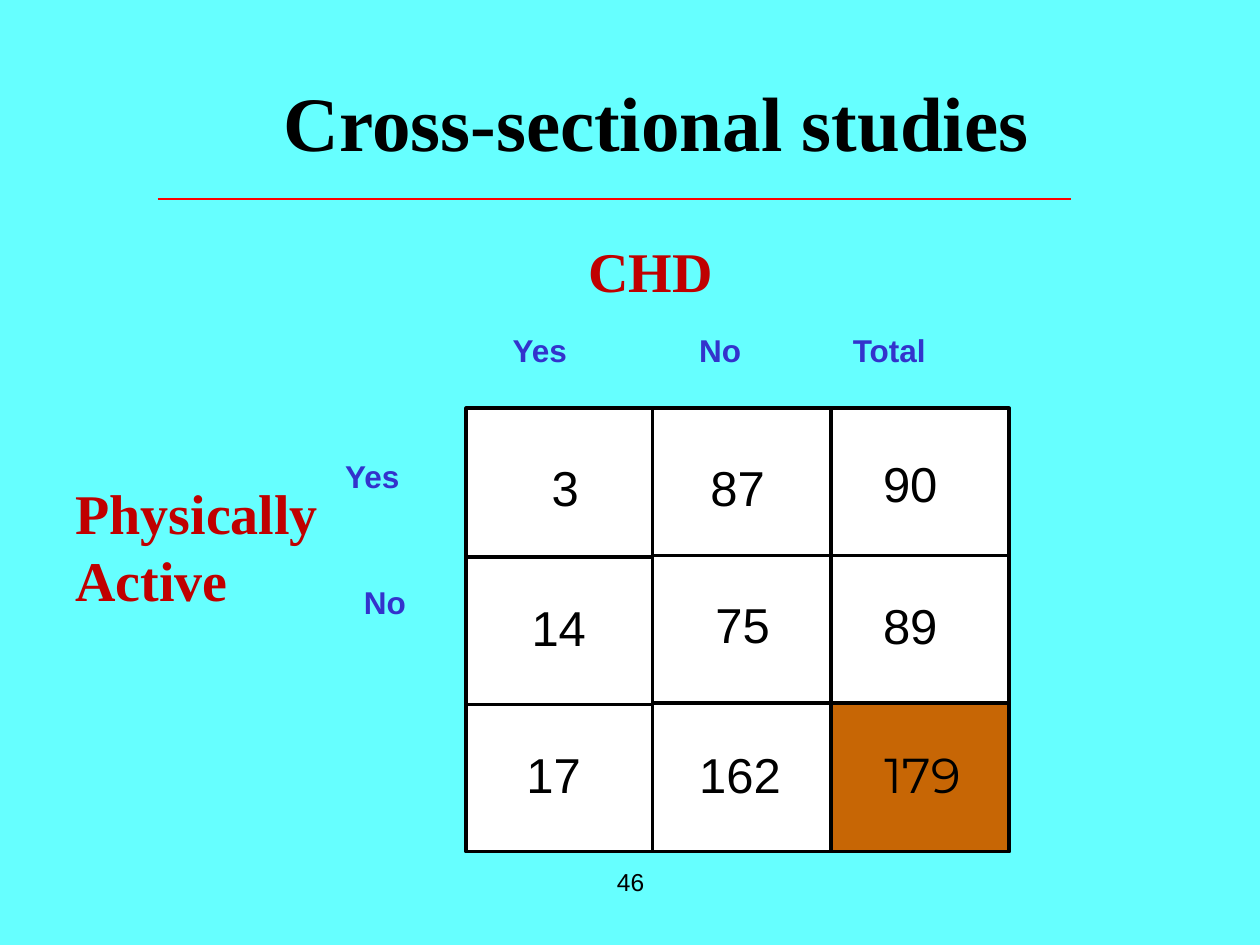
"""Build the cross-sectional studies slide with its two-by-two table and totals."""
from dataclasses import dataclass

from lxml import etree
from pptx import Presentation
from pptx.dml.color import RGBColor
from pptx.enum.shapes import MSO_CONNECTOR, MSO_SHAPE
from pptx.enum.text import MSO_ANCHOR, MSO_AUTO_SIZE, PP_ALIGN
from pptx.oxml.ns import qn
from pptx.util import Inches, Pt

RECT = MSO_SHAPE.RECTANGLE
STRAIGHT = MSO_CONNECTOR.STRAIGHT
MIDDLE, TOP = MSO_ANCHOR.MIDDLE, MSO_ANCHOR.TOP
FIT, NO_FIT = MSO_AUTO_SIZE.SHAPE_TO_FIT_TEXT, MSO_AUTO_SIZE.NONE
LEFT, CENTER = PP_ALIGN.LEFT, PP_ALIGN.CENTER


@dataclass(frozen=True)
class Theme:
    """Colours, fonts and type sizes of the slide."""
    background: str = "66FFFF"
    ink: str = "000000"
    heading: str = "C00000"
    label: str = "3333CC"
    cell: str = "FFFFFF"
    grand_total: str = "C76605"
    rule: str = "FF0000"
    serif: str = "Times New Roman"
    sans: str = "Arial"
    number: str = "Montserrat"
    title_pt: int = 44
    heading_pt: int = 32
    number_pt: int = 28
    label_pt: int = 18
    footer_pt: int = 14


THEME = Theme()
GRID_LEFT, GRID_TOP = 3.7, 3.24
COL_STEP, ROW_STEP = 1.415, 1.17
CELL_W, CELL_H = 1.48, 1.18

COLUMN_LABELS = [("Yes", 3.97, 0.98), ("No", 5.45, 0.83), ("Total", 6.67, 1.18)]
ROW_LABELS = [("Yes", 2.64, 3.58, 0.98), ("No", 2.79, 4.58, 0.83)]
COUNTS = [
    ("3", 4.28, 3.58, 0.67), ("87", 5.54, 3.58, 0.88),
    ("14", 4.12, 4.69, 0.88), ("75", 5.58, 4.67, 0.88), ("89", 6.91, 4.68, 0.88),
    ("17", 4.08, 5.86, 0.88), ("162", 5.45, 5.86, 1.1),
]


def rgb(value):
    """Return a colour from its hex string."""
    return RGBColor.from_string(value)


def add_rect(s, x, y, w, h, fill):
    """Add a filled rectangle without outline."""
    sp = s.shapes.add_shape(RECT, Inches(x), Inches(y), Inches(w), Inches(h))
    sp.shadow.inherit = False
    sp.fill.solid()
    sp.fill.fore_color.rgb = rgb(fill)
    sp.line.fill.background()
    return sp


def add_text(s, text, x, y, w, h, *, font, size, color=THEME.ink, bold=False, fill=None,
             align=LEFT, rtl=True, wrap=False, anchor=TOP, complex_font=None):
    """Add text with one paragraph for each line, on a filled rectangle if asked."""
    if fill:
        sp = add_rect(s, x, y, w, h, fill)
    else:
        sp = s.shapes.add_textbox(Inches(x), Inches(y), Inches(w), Inches(h))
    tf = sp.text_frame
    tf.word_wrap = wrap
    tf.auto_size = NO_FIT if wrap else FIT
    tf.vertical_anchor = anchor
    for i, line in enumerate(text.split("\n")):
        p = tf.add_paragraph() if i else tf.paragraphs[0]
        p.alignment = align
        if rtl:
            p._p.get_or_add_pPr().set("rtl", "1")
        r = p.add_run()
        r.text = line
        r.font.name, r.font.size, r.font.bold = font, Pt(size), bold
        r.font.color.rgb = rgb(color)
        cs = etree.SubElement(r._r.get_or_add_rPr(), qn("a:cs"))
        cs.set("typeface", complex_font or font)


def add_cell(s, row, col):
    """Add one outlined cell of the grid."""
    is_grand_total = row == col == 2
    sp = add_rect(s, GRID_LEFT + col * COL_STEP, GRID_TOP + row * ROW_STEP, CELL_W, CELL_H,
                  THEME.grand_total if is_grand_total else THEME.cell)
    sp.line.color.rgb = rgb(THEME.ink)
    sp.line.width = Pt(2)


def add_grid(s):
    """Add the cells from right to left, the first column from the bottom up."""
    for col in (2, 1, 0):
        for row in (range(3) if col else reversed(range(3))):
            add_cell(s, row, col)


def add_rule(s, x1, x2, y):
    """Add the horizontal rule under the title."""
    line = s.shapes.add_connector(STRAIGHT, Inches(x1), Inches(y), Inches(x2), Inches(y))
    line.line.color.rgb = rgb(THEME.rule)
    line.line.width = Pt(1)
    etree.SubElement(line._element.spPr, qn("a:effectLst"))


def main():
    """Build and save the slide."""
    prs = Presentation()
    prs.slide_width, prs.slide_height = Inches(10), Inches(7.5)
    s = prs.slides.add_slide(prs.slide_layouts[6])
    s.background.fill.solid()
    s.background.fill.fore_color.rgb = rgb(THEME.background)

    add_text(s, "46", 3.42, 6.83, 3.17, 0.5, font=THEME.serif, size=THEME.footer_pt,
             align=CENTER, wrap=True, complex_font=THEME.sans)
    add_grid(s)
    add_text(s, "Cross-sectional studies", 0.67, 0.61, 9.08, 0.7, font=THEME.serif,
             size=THEME.title_pt, bold=True, align=CENTER, wrap=True, anchor=MIDDLE)
    add_rule(s, 1.25, 8.5, 1.58)

    heading = dict(font=THEME.serif, size=THEME.heading_pt, color=THEME.heading, bold=True)
    add_text(s, "CHD", 4.57, 1.83, 1.2, 0.64, **heading)
    add_text(s, "Physically\nActive", 0.5, 3.75, 2.15, 1.18, rtl=False, **heading)

    label = dict(font=THEME.sans, size=THEME.label_pt, color=THEME.label, bold=True)
    for text, x, w in COLUMN_LABELS:
        add_text(s, text, x, 2.58, w, 0.5, **label)
    for text, x, y, w in ROW_LABELS:
        add_text(s, text, x, y, w, 0.5, **label)

    number = dict(font=THEME.number, size=THEME.number_pt)
    for text, x, y, w in COUNTS:
        add_text(s, text, x, y, w, 0.57, complex_font=THEME.sans, **number)
    add_text(s, "90", 6.91, 3.55, 0.88, 0.57, complex_font=THEME.sans, fill=THEME.cell, **number)
    add_text(s, "179", 6.92, 5.86, 0.99, 0.57, rtl=False, **number)

    prs.save("out.pptx")


if __name__ == "__main__":
    main()
